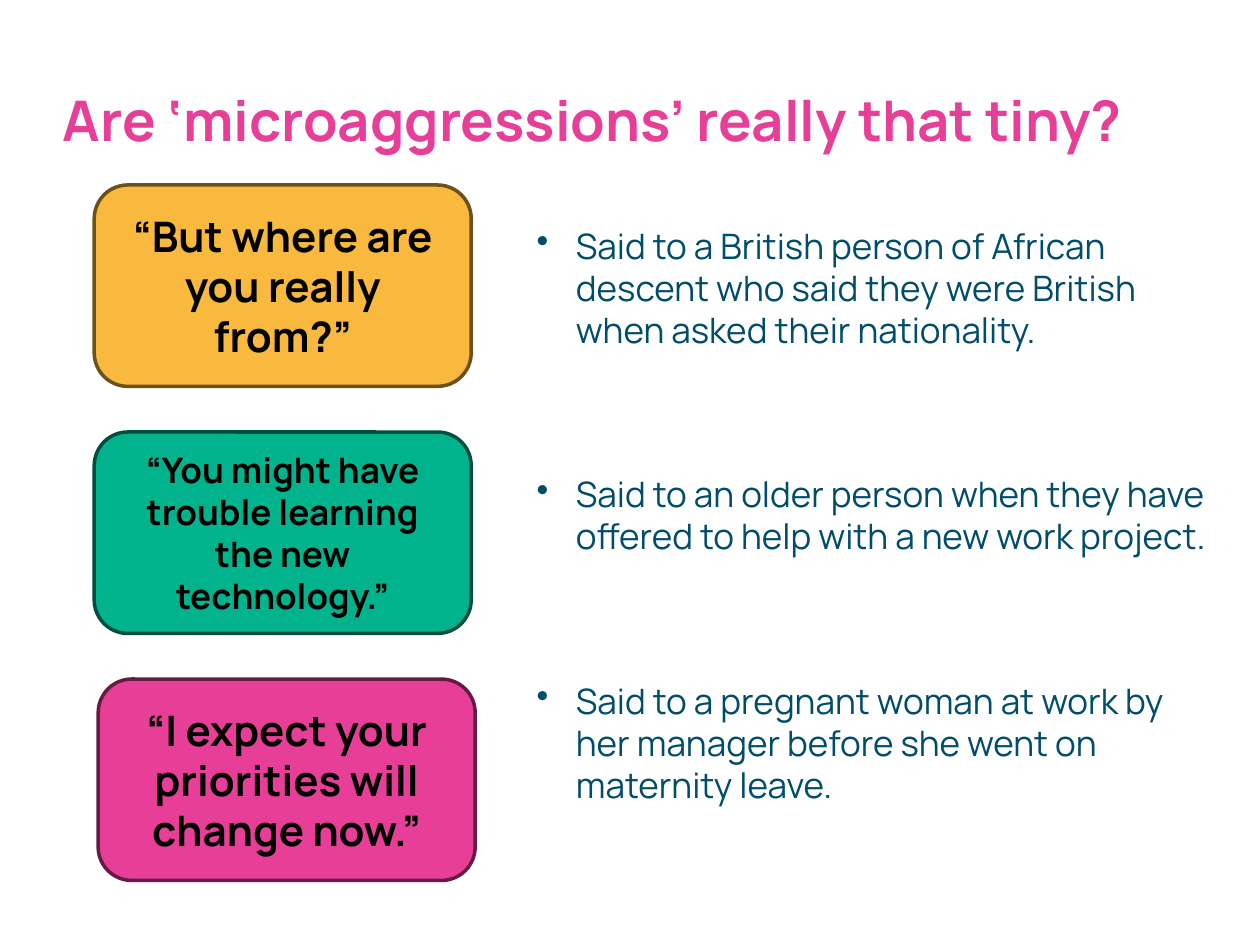
import dataclasses

import lxml.etree
import pptx
import pptx.dml.color
import pptx.enum.shapes
import pptx.enum.text
import pptx.oxml.ns
import pptx.util

Cm = pptx.util.Cm
Pt = pptx.util.Pt
RGB = pptx.dml.color.RGBColor.from_string


@dataclasses.dataclass(frozen=True)
class Theme:
    font: str = "Manrope"
    pink: str = "E73E97"
    pink_dark: str = "651B42"
    amber: str = "F9B93E"
    amber_dark: str = "6D511B"
    green: str = "00B38C"
    green_dark: str = "004E3D"
    body: str = "004C6B"
    quote: str = "000000"
    title_size: int = 32
    quote_size: int = 24
    text_size: int = 20


THEME = Theme()

QUOTES = [
    ("“But where are you really from?”",
     THEME.amber, THEME.amber_dark, THEME.quote_size, 1.9),
    ("“You might have trouble learning the new technology.”",
     THEME.green, THEME.green_dark, THEME.text_size, 1.9),
    ("“I expect your priorities will change now.”",
     THEME.pink, THEME.pink_dark, THEME.quote_size, 1.98),
]

CONTEXTS = [
    "Said to a British person of African descent who said they were British "
    "when asked their nationality.",
    "Said to an older person when they have offered to help with a new work project.",
    "Said to a pregnant woman at work by her manager before she went on maternity leave.",
]


def add_run(p, text, size, color, bold=False):
    r = p.add_run()
    r.text = text
    r.font.name = THEME.font
    r.font.size = Pt(size)
    r.font.bold = bold
    r.font.color.rgb = RGB(color)


def add_text_frame(s, left, top, width, height):
    tf = s.shapes.add_textbox(Cm(left), Cm(top), Cm(width), Cm(height)).text_frame
    tf.word_wrap = True
    tf.margin_left = tf.margin_top = tf.margin_right = tf.margin_bottom = 0
    return tf


def add_title(s, text):
    tf = add_text_frame(s, 1.27, 1.73, 23.09, 1.3)
    add_run(tf.paragraphs[0], text, THEME.title_size, THEME.pink, True)


def set_bullet(p, indent):
    pPr = p._p.get_or_add_pPr()
    pPr.set("marL", str(indent))
    pPr.set("indent", str(-indent))
    bullet = lxml.etree.SubElement(pPr, pptx.oxml.ns.qn("a:buChar"))
    bullet.set("char", "•")


def add_bullets(s, items):
    tf = add_text_frame(s, 10.82, 4.52, 13.54, 13.23)
    for i, text in enumerate(items):
        p = tf.paragraphs[0] if i == 0 else tf.add_paragraph()
        set_bullet(p, Cm(0.79))
        p.space_after = Pt(70 if i < len(items) - 1 else 0)
        add_run(p, text, THEME.text_size, THEME.body)


def add_quote(s, text, fill, line, size, left, top):
    sp = s.shapes.add_shape(pptx.enum.shapes.MSO_SHAPE.ROUNDED_RECTANGLE,
                            Cm(left), Cm(top), Cm(7.6), Cm(4.06))
    sp.shadow.inherit = False
    sp.fill.solid()
    sp.fill.fore_color.rgb = RGB(fill)
    sp.line.color.rgb = RGB(line)
    sp.line.width = Pt(2)
    tf = sp.text_frame
    tf.word_wrap = True
    tf.vertical_anchor = pptx.enum.text.MSO_ANCHOR.MIDDLE
    p = tf.paragraphs[0]
    p.alignment = pptx.enum.text.PP_ALIGN.CENTER
    add_run(p, text, size, THEME.quote, True)


def main():
    prs = pptx.Presentation()
    prs.slide_width, prs.slide_height = Cm(25.4), Cm(19.05)
    s = prs.slides.add_slide(prs.slide_layouts[6])
    add_title(s, "Are ‘microaggressions’ really that tiny?")
    add_bullets(s, CONTEXTS)
    for i, quote in enumerate(QUOTES):
        add_quote(s, *quote, top=3.73 + 4.98 * i)
    prs.save("out.pptx")


if __name__ == "__main__":
    main()
